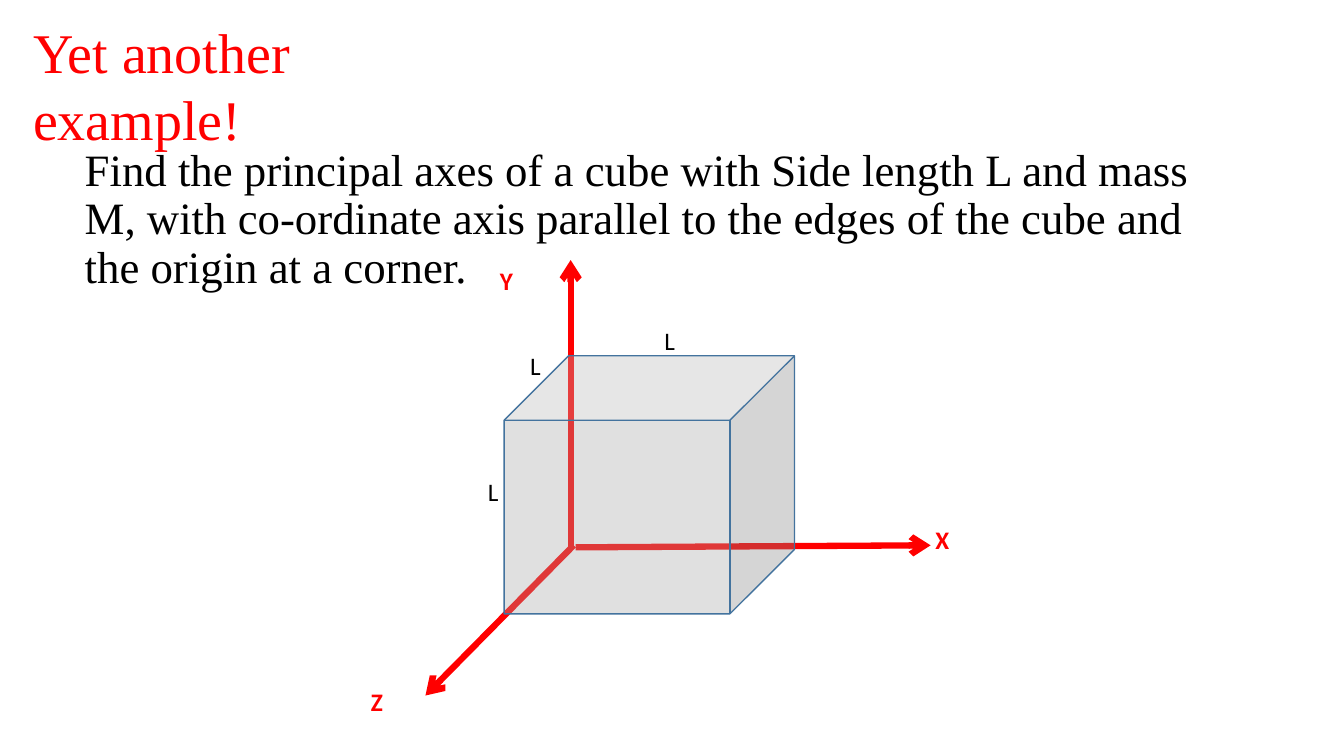
from typing import NamedTuple

from lxml.etree import SubElement
from pptx import Presentation
from pptx.dml.color import RGBColor
from pptx.enum.shapes import MSO_CONNECTOR as Connector, MSO_SHAPE as Shape
from pptx.enum.text import MSO_ANCHOR as Anchor, MSO_AUTO_SIZE as AutoSize, PP_ALIGN as Align
from pptx.oxml.ns import qn
from pptx.shapes.shapetree import GroupShapes
from pptx.text.text import TextFrame
from pptx.util import Emu, Pt

PX = 9144  # 100 px to the inch
COLORS = {"axis": "FF0000", "text": "000000", "cube": "A6A6A6", "edge": "43739E"}
SERIF, SANS = "Times New Roman", "Calibri"


class Axis(NamedTuple):
    name: str
    start: tuple[int, int]
    end: tuple[int, int]
    label: tuple[int, int]


class SideLabel(NamedTuple):
    left: int
    top: int


AXES = [
    Axis("X", (571, 543), (923, 541), (918, 515)),
    Axis("Z", (569, 541), (422, 690), (358, 676)),
    Axis("Y", (566, 544), (566, 258), (486, 258)),
]
SIDE_LABELS = [SideLabel(649, 318), SideLabel(474, 468), SideLabel(516, 343)]


def px(*lengths: int) -> list[Emu]:
    return [Emu(length * PX) for length in lengths]


def color(name: str) -> RGBColor:
    return RGBColor.from_string(COLORS[name])


def write(frame: TextFrame, text: str, size: int, font: str, color_name: str,
          bold: bool = False, spacing: float = 1.0) -> None:
    paragraph = frame.paragraphs[0]
    paragraph.alignment = Align.LEFT
    paragraph.line_spacing = spacing
    run = paragraph.add_run()
    run.text = text
    run.font.size = Pt(size)
    run.font.name = font
    run.font.bold = bold
    run.font.color.rgb = color(color_name)


def add_label(shapes: GroupShapes, text: str, left: int, top: int, width: int,
              color_name: str, bold: bool, wrap: bool) -> None:
    frame = shapes.add_textbox(*px(left, top, width, 40)).text_frame
    frame.word_wrap = wrap
    frame.auto_size = AutoSize.SHAPE_TO_FIT_TEXT
    write(frame, text, 18, SANS, color_name, bold)


def add_axis(shapes: GroupShapes, axis: Axis) -> None:
    line = shapes.add_connector(Connector.STRAIGHT, *px(*axis.start, *axis.end))
    line.line.color.rgb = color("axis")
    line.line.width = Pt(4.5)
    properties = line._element.spPr.find(qn("a:ln"))
    SubElement(properties, qn("a:tailEnd"), type="arrow")
    SubElement(line._element.spPr, qn("a:effectLst"))
    add_label(shapes, axis.name, *axis.label, 65, "axis", True, True)


def add_cube(shapes: GroupShapes) -> None:
    cube = shapes.add_shape(Shape.CUBE, *px(500, 353, 288, 256))
    cube.shadow.inherit = False
    cube.fill.solid()
    cube.fill.fore_color.rgb = color("cube")
    fill_color = cube._element.spPr.find(qn("a:solidFill"))[0]
    SubElement(fill_color, qn("a:alpha"), val="34000")
    cube.line.color.rgb = color("edge")
    cube.line.width = Pt(1)


def main() -> None:
    presentation = Presentation()
    presentation.slide_width, presentation.slide_height = px(1333, 750)
    slide = presentation.slides.add_slide(presentation.slide_layouts[5])

    title = slide.shapes.title
    title.left, title.top, title.width, title.height = px(74, 146, 1150, 145)
    title.text_frame.word_wrap = True
    title.text_frame.auto_size = AutoSize.NONE
    title.text_frame.vertical_anchor = Anchor.MIDDLE
    write(title.text_frame,
          "Find the principal axes of a cube with Side length L and mass M, "
          "with co-ordinate axis parallel to the edges of the cube and "
          "the origin at a corner.", 32, SERIF, "text", spacing=0.9)

    diagram = slide.shapes.add_group_shape().shapes
    for axis in AXES:
        add_axis(diagram, axis)
    add_cube(diagram)
    for side in SIDE_LABELS:
        add_label(diagram, "L", side.left, side.top, 31, "text", False, False)

    heading = slide.shapes.add_textbox(*px(23, 12, 453, 77)).text_frame
    heading.word_wrap = True
    heading.auto_size = AutoSize.SHAPE_TO_FIT_TEXT
    write(heading, "Yet another example!", 40, SERIF, "axis")

    presentation.save("out.pptx")


if __name__ == "__main__":
    main()
